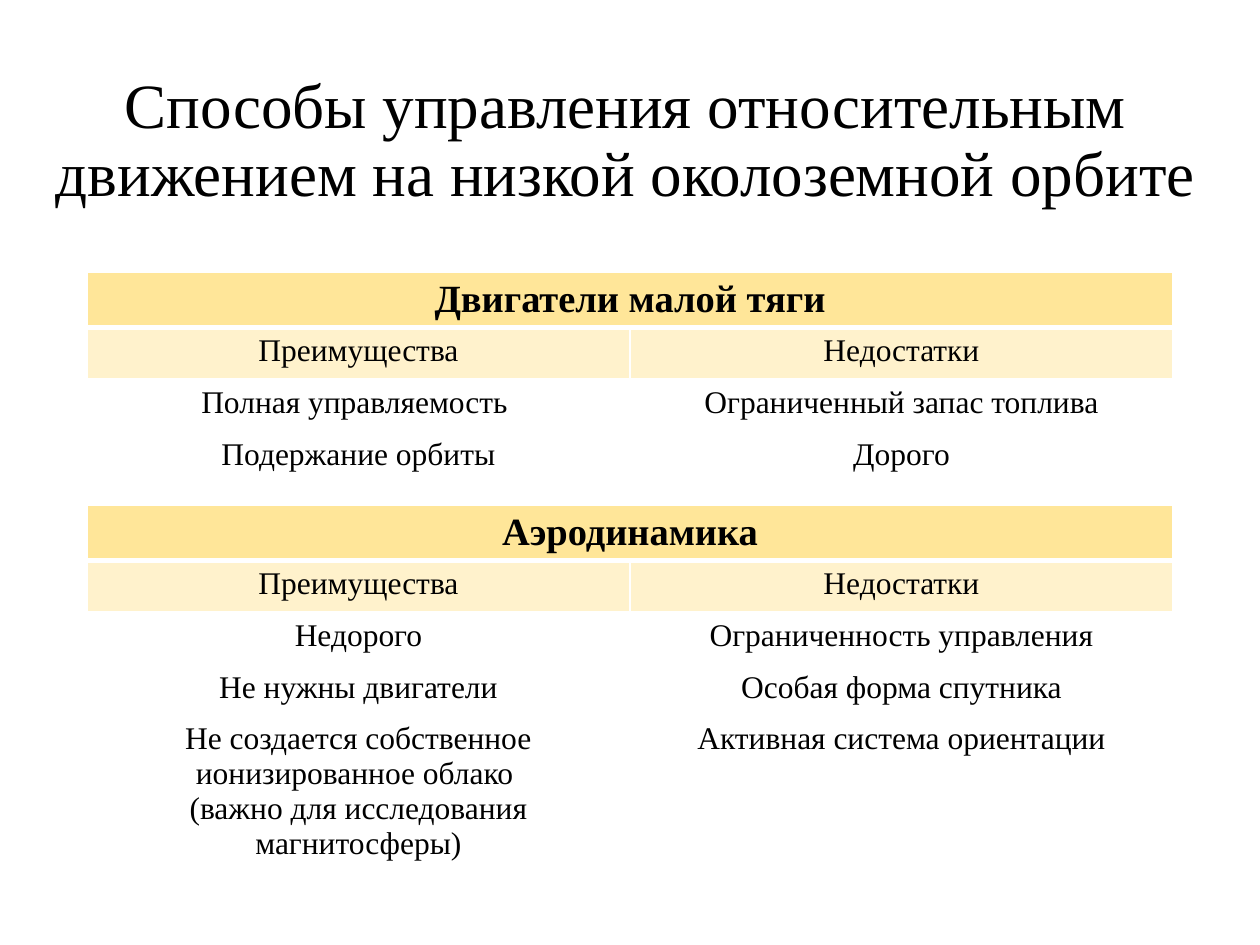
from lxml.etree import SubElement
from pptx import Presentation
from pptx.dml.color import RGBColor
from pptx.enum.text import MSO_ANCHOR, MSO_AUTO_SIZE, PP_ALIGN
from pptx.oxml.ns import qn
from pptx.util import Inches, Pt

BLACK = RGBColor(0x00, 0x00, 0x00)
WHITE = RGBColor(0xFF, 0xFF, 0xFF)
GOLD = RGBColor(0xFF, 0xE6, 0x99)
CREAM = RGBColor(0xFF, 0xF2, 0xCC)
FONT = "Times New Roman"

TITLE = "Способы управления относительным движением на низкой околоземной орбите"
HEADS = ("Преимущества", "Недостатки")
TABLES = [
    (2.16, "Двигатели малой тяги", [
        ("Полная управляемость ", "Ограниченный запас топлива"),
        ("Подержание орбиты", "Дорого"),
    ]),
    (4.01, "Аэродинамика", [
        ("Недорого", "Ограниченность управления"),
        ("Не нужны двигатели", "Особая форма спутника"),
        ("Не создается собственное ионизированное облако \n"
         "(важно для исследования магнитосферы)", "Активная система ориентации"),
    ]),
]
LEFT, WIDTH, ROW = 0.69, 8.62, 0.41


def write(frame, text, size=18, bold=False, space=None):
    para = frame.paragraphs[0]
    para.text = text
    para.alignment = PP_ALIGN.CENTER
    para.line_spacing = space
    for run in para.runs:
        font = run.font
        font.name, font.size, font.bold = FONT, Pt(size), bold
        font.color.rgb = BLACK


def edge(cell, **widths):
    props = cell._tc.get_or_add_tcPr()
    for side in "LRTB":
        line = SubElement(props, qn("a:ln" + side), w=str(Pt(widths.get(side, 1))))
        fill = SubElement(line, qn("a:solidFill"))
        SubElement(fill, qn("a:srgbClr"), val=str(WHITE))


def paint(cell, color):
    cell.fill.solid()
    cell.fill.fore_color.rgb = color


def draw(slide, top, name, pairs):
    rows = [(name, ""), HEADS, *pairs]
    frame = slide.shapes.add_table(len(rows), 2, Inches(LEFT), Inches(top),
                                   Inches(WIDTH), Inches(ROW * len(rows)))
    table = frame.table
    for r, row in enumerate(rows):
        table.rows[r].height = Inches(ROW)
        color = (GOLD, CREAM)[r] if r < 2 else WHITE
        for c, text in enumerate(row):
            cell = table.cell(r, c)
            edge(cell, T=3 if r == 1 else 1, B=3 if r == 0 else 1)
            paint(cell, color)
            write(cell.text_frame, text, size=18 if r else 22, bold=r == 0)
    table.cell(0, 0).merge(table.cell(0, 1))


def main():
    deck = Presentation()
    deck.slide_width, deck.slide_height = Inches(10), Inches(7.5)
    slide = deck.slides.add_slide(deck.slide_layouts[5])
    title = slide.shapes.title
    title.left, title.top = Inches(-0.19), Inches(0.4)
    title.width, title.height = Inches(10.31), Inches(1.45)
    frame = title.text_frame
    frame.word_wrap = True
    frame.auto_size = MSO_AUTO_SIZE.NONE
    frame.vertical_anchor = MSO_ANCHOR.MIDDLE
    write(frame, TITLE, size=36, space=0.9)
    for part in TABLES:
        draw(slide, *part)
    deck.save("out.pptx")


if __name__ == "__main__":
    main()
